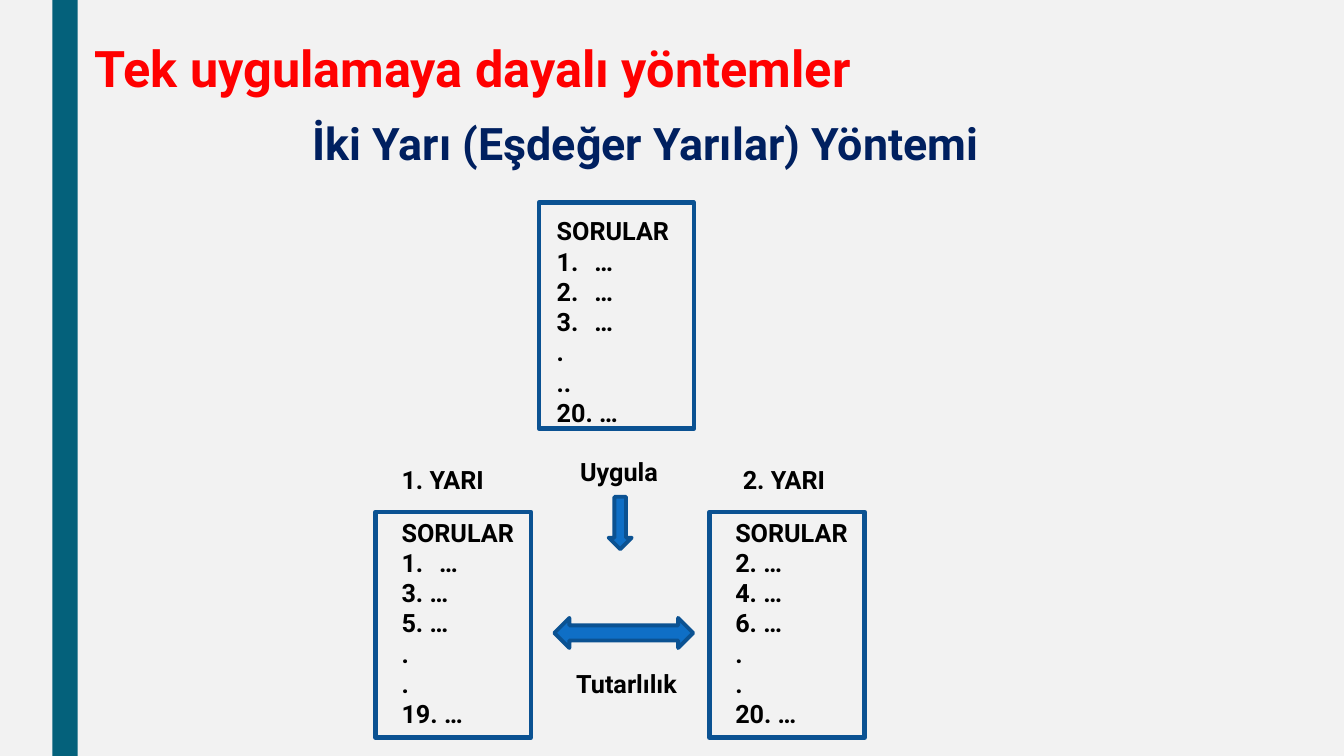
from dataclasses import dataclass

from lxml.etree import SubElement
from pptx import Presentation
from pptx.dml.color import RGBColor
from pptx.enum.shapes import MSO_SHAPE
from pptx.enum.text import MSO_ANCHOR, MSO_AUTO_SIZE, PP_ALIGN
from pptx.oxml.ns import qn
from pptx.util import Cm, Pt


@dataclass(frozen=True)
class Theme:
    """Colours, font and type sizes of the slide."""
    back: str = "F2F2F2"
    bar: str = "04617B"
    head: str = "FF0000"
    title: str = "002060"
    ink: str = "000000"
    edge: str = "0B5292"
    arrow: str = "0F6FC6"
    font: str = "Roboto"
    big: int = 36
    mid: int = 32
    small: int = 18


THEME = Theme()
CARD = (3.91, 5.69)


def place(shape, box):
    """Set the position and size of a shape from a box in centimetres."""
    shape.left, shape.top, shape.width, shape.height = map(Cm, box)


def style(para, size, color):
    """Give a paragraph the bold font of the slide."""
    font = para.font
    font.name, font.size, font.bold = THEME.font, Pt(size), True
    font.color.rgb = RGBColor.from_string(color)


def draw(slide, kind, box, fill=None, line=None, width=0):
    """Draw a flat preset shape."""
    shape = slide.shapes.add_shape(kind, *map(Cm, box))
    shape.shadow.inherit = False
    if fill:
        shape.fill.solid()
        shape.fill.fore_color.rgb = RGBColor.from_string(fill)
    else:
        shape.fill.background()
    if line:
        shape.line.color.rgb = RGBColor.from_string(line)
        shape.line.width = Pt(width)
    else:
        shape.line.fill.background()


def write(slide, box, lines, size=THEME.small, color=THEME.ink):
    """Add a text box with one paragraph per line and return its frame."""
    frame = slide.shapes.add_textbox(*map(Cm, box)).text_frame
    frame.word_wrap = True
    for num, line in enumerate(lines):
        para = frame.paragraphs[0] if num == 0 else frame.add_paragraph()
        para.text = line
        style(para, size, color)
    return frame


def indent(para, auto):
    """Hang a paragraph, with an automatic number if asked."""
    props = para._p.get_or_add_pPr()
    props.set("marL", str(Cm(0.95)))
    props.set("indent", str(-Cm(0.95)))
    if auto:
        mark = SubElement(props, qn("a:buAutoNum"), type="arabicPeriod")
        props.find(qn("a:defRPr")).addprevious(mark)


def card(slide, left, top, shift, lines, autos):
    """Draw a framed question list whose first items are numbered."""
    wide, high = CARD
    draw(slide, MSO_SHAPE.RECTANGLE, (left, top, wide, high),
         line=THEME.edge, width=3.25)
    box = (left + shift[0], top + shift[1], 3.71, high)
    frame = write(slide, box, ["SORULAR", *lines])
    for num, para in enumerate(frame.paragraphs[1:]):
        indent(para, num < autos)


def header(slide, box):
    """Place the red heading and the title below it."""
    left, top, wide, high = box
    frame = write(slide, (left, top, 20.96, high),
                  ["Tek uygulamaya dayalı yöntemler"], THEME.big, THEME.head)
    frame.vertical_anchor = MSO_ANCHOR.MIDDLE
    frame.paragraphs[0].line_spacing = 0.89
    title = slide.shapes.title
    place(title, (left + 5.49, top + 2.95, wide - 5.49, 3.17))
    frame = title.text_frame
    frame.text = "İki Yarı (Eşdeğer Yarılar) Yöntemi"
    frame.auto_size = MSO_AUTO_SIZE.NONE
    frame.vertical_anchor = MSO_ANCHOR.TOP
    para = frame.paragraphs[0]
    para.alignment = PP_ALIGN.LEFT
    para.line_spacing = 0.89
    style(para, THEME.mid, THEME.title)


def halves(slide, box):
    """Lay out the full test, its two halves and the arrows between."""
    left, top, wide, high = box
    low = top + high - CARD[1]
    right = left + wide - CARD[0]
    card(slide, left + 4.11, top, (0.2, 0.2),
         ["…", "…", "…", ".", "..", "20. …"], 3)
    card(slide, left, low, (0.4, 0),
         ["…", "3. …", "5. …", ".", ".", "19. …"], 1)
    card(slide, right, low, (0.4, 0),
         ["2. …", "4. …", "6. …", ".", ".", "20. …"], 0)
    labels = [("1. YARI", left + 0.4, low - 1.32, 2.74),
              ("2. YARI", right + 0.59, low - 1.32, 2.74),
              ("Uygula", left + 4.9, low - 1.52, 2.74),
              ("Tutarlılık", left + 4.8, low + 3.81, 3.2)]
    for text, x, y, w in labels:
        write(slide, (x, y, w, 1.02), [text])
    arrows = [(MSO_SHAPE.DOWN_ARROW, (left + 5.87, low - 0.38, 0.58, 1.32)),
              (MSO_SHAPE.LEFT_RIGHT_ARROW, (left + 4.5, low + 2.67, 3.5, 0.76))]
    for kind, area in arrows:
        draw(slide, kind, area, THEME.arrow, THEME.edge, 2.75)


def main():
    """Build and save the slide."""
    deck = Presentation()
    deck.slide_width, deck.slide_height = Cm(33.87), Cm(19.05)
    slide = deck.slides.add_slide(deck.slide_layouts[5])
    back = slide.background.fill
    back.solid()
    back.fore_color.rgb = RGBColor.from_string(THEME.back)
    draw(slide, MSO_SHAPE.RECTANGLE, (1.32, 0, 0.64, 19.05), THEME.bar)
    header(slide, (2.13, 0, 29.7, 3.61))
    halves(slide, (9.47, 5.11, 12.32, 13.48))
    deck.save("out.pptx")


if __name__ == "__main__":
    main()
